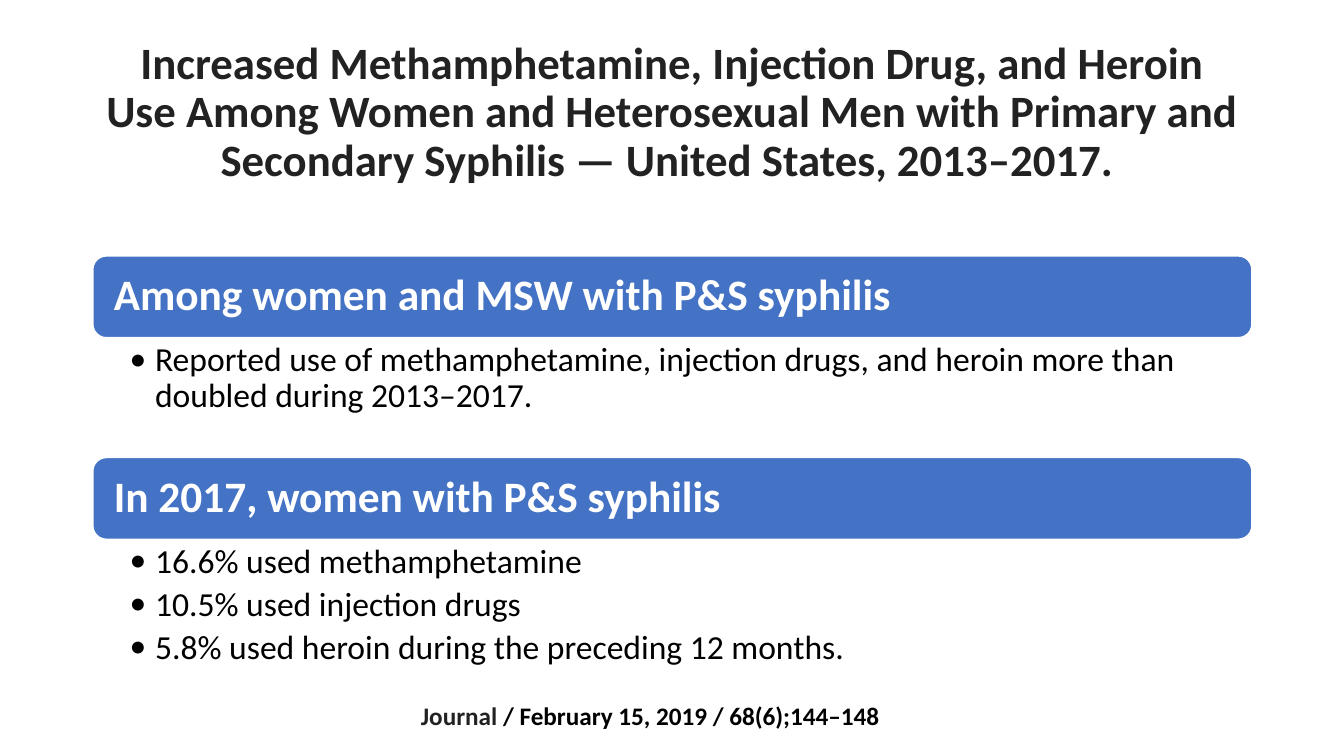
from lxml import etree
from pptx import Presentation, util as u
from pptx.dml.color import RGBColor
from pptx.enum import shapes, text
from pptx.oxml import ns

TITLE = ("Increased Methamphetamine, Injection Drug, and Heroin Use Among "
         "Women and Heterosexual Men with Primary and Secondary Syphilis "
         "— United States, 2013–2017. ")
PARTS = [
    ("Among women and MSW with P&S syphilis", 3.02,
     ["Reported use of methamphetamine, injection drugs, and heroin "
      "more than doubled during 2013–2017."]),
    ("In 2017, women with P&S syphilis", 3.48,
     ["16.6% used methamphetamine",
      "10.5% used injection drugs",
      "5.8% used heroin during the preceding 12 months."]),
]
INK = RGBColor(0x22, 0x22, 0x22)
BLACK = RGBColor(0, 0, 0)
WHITE = RGBColor(0xFF, 0xFF, 0xFF)
BLUE = RGBColor(0x44, 0x72, 0xC4)
SOURCE = [("Journal", INK), ("\u00a0/ February 15, 2019 / 68(6);144–148", BLACK)]

LEFT, WIDE = 2.34, 29.21
TOP, BAR = 6.45, 2.06
MID = text.MSO_ANCHOR.MIDDLE
CENTER, START = text.PP_ALIGN.CENTER, text.PP_ALIGN.LEFT

deck = Presentation()
deck.slide_width, deck.slide_height = u.Cm(33.87), u.Cm(19.05)
slide = deck.slides.add_slide(deck.slide_layouts[6])


def style(item, form):
    for key, val in form.items():
        setattr(item, key, val)


def box(x, y, w, h, **form):
    item = slide.shapes.add_textbox(*map(u.Cm, (x, y, w, h)))
    style(item.text_frame, {"word_wrap": True, **form})
    return item.text_frame


def write(para, runs, size, bold, **form):
    style(para, form)
    for words, color in runs:
        run = para.add_run()
        run.text = words
        style(run.font, {"name": "Calibri", "size": u.Pt(size), "bold": bold})
        run.font.color.rgb = color


def bullet(para):
    props = para._p.get_or_add_pPr()
    props.set("marL", str(u.Cm(0.64)))
    props.set("indent", str(u.Cm(-0.64)))
    etree.SubElement(props, ns.qn("a:buFont")).set("typeface", "Calibri")
    etree.SubElement(props, ns.qn("a:buChar")).set("char", "•")


head = box(LEFT, 1.02, WIDE, 3.68, vertical_anchor=MID)
write(head.paragraphs[0], [(TITLE, INK)], 32, True,
      alignment=CENTER, line_spacing=0.9)

top = TOP
for name, high, facts in PARTS:
    bar = slide.shapes.add_shape(shapes.MSO_SHAPE.ROUNDED_RECTANGLE,
                                 *map(u.Cm, (LEFT, top, WIDE, BAR)))
    bar.shadow.inherit = False
    bar.fill.solid()
    bar.fill.fore_color.rgb = BLUE
    bar.line.color.rgb = WHITE
    bar.line.width = u.Pt(1)
    style(bar.text_frame, {"word_wrap": True, "vertical_anchor": MID,
                           "margin_left": u.Cm(0.43),
                           "margin_right": u.Cm(0.43)})
    write(bar.text_frame.paragraphs[0], [(name, WHITE)], 31, True,
          alignment=START, line_spacing=0.9)

    body = box(LEFT, top + BAR, WIDE, high,
               margin_left=u.Cm(0.93), margin_right=u.Cm(0.6),
               margin_top=u.Cm(0.12), margin_bottom=u.Cm(0.1))
    for i, fact in enumerate(facts):
        para = body.add_paragraph() if i else body.paragraphs[0]
        write(para, [(fact, BLACK)], 24, False, level=1,
              line_spacing=0.9, space_after=u.Pt(4.8))
        bullet(para)
    top += BAR + high

foot = box(7.92, 17.53, 16.94, 1.02)
write(foot.paragraphs[0], SOURCE, 18, True, alignment=CENTER)

deck.save("out.pptx")
